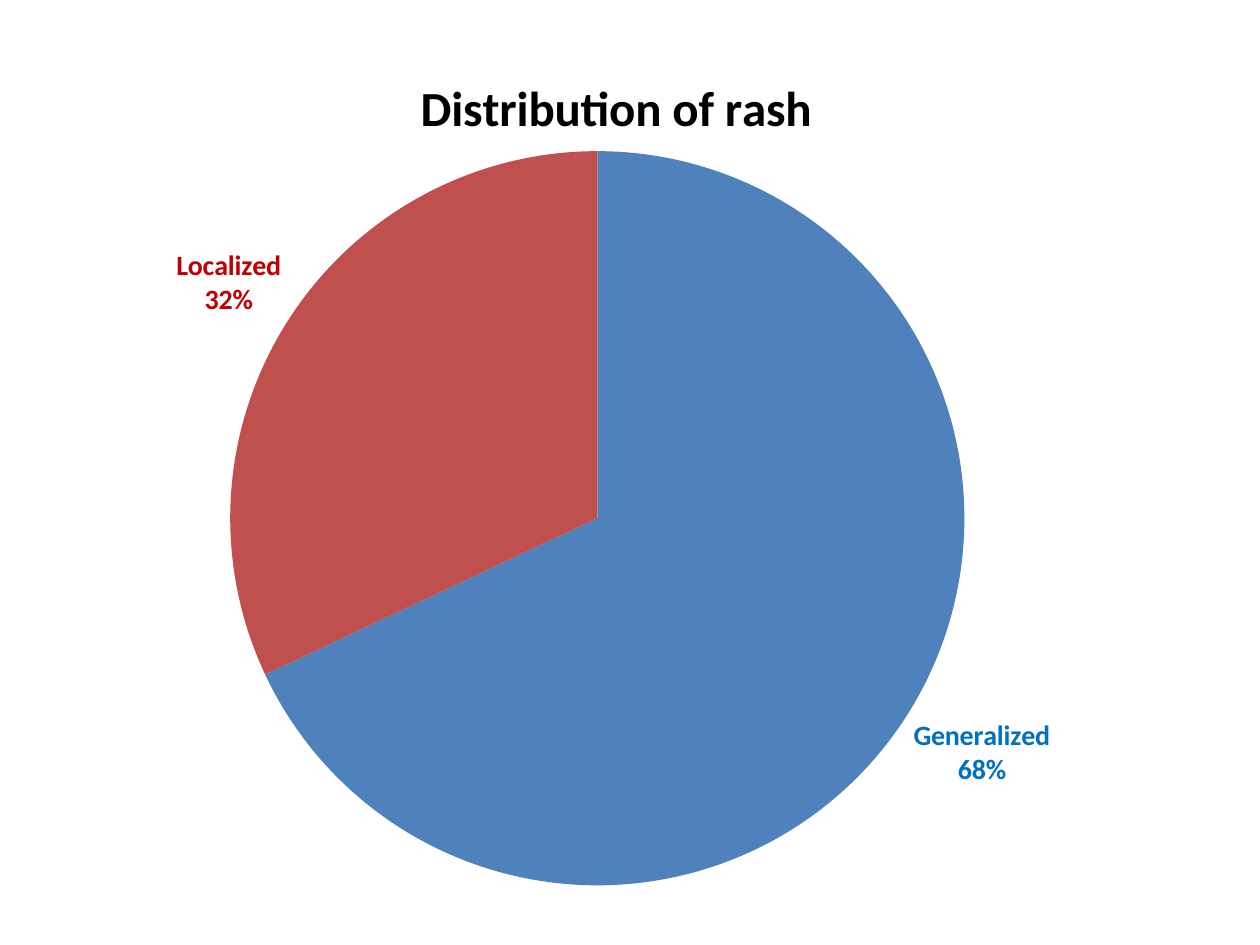
"""Build a slide with a pie chart of rash distribution."""
from dataclasses import dataclass

from lxml.etree import SubElement
from pptx import Presentation
from pptx.chart.data import CategoryChartData
from pptx.dml.color import RGBColor
from pptx.enum.chart import XL_CHART_TYPE, XL_LABEL_POSITION
from pptx.oxml import parse_xml
from pptx.oxml.ns import nsdecls, qn
from pptx.util import Cm, Pt


@dataclass(frozen=True)
class Theme:
    font: str = "Calibri"
    text: str = "000000"
    slices: tuple = ("4F81BD", "C0504D")
    labels: tuple = ("0070C0", "C00000")
    base_size: int = 10
    label_size: int = 16
    title_size: int = 28


class SlideBuilder:
    def __init__(self, page, theme):
        self.page = page
        self.theme = theme

    def style(self, font, size, color, bold=False):
        font.name = self.theme.font
        font.size = Pt(size)
        font.bold = bold
        font.color.rgb = RGBColor.from_string(color)

    def layout(self, **fractions):
        target = '<c:layoutTarget val="inner"/>' if "w" in fractions else ""
        modes = "".join(f'<c:{axis}Mode val="edge"/>' for axis in "xy")
        values = "".join(f'<c:{key} val="{value}"/>' for key, value in fractions.items())
        return parse_xml(
            f'<c:layout {nsdecls("c")}><c:manualLayout>{target}{modes}{values}'
            "</c:manualLayout></c:layout>"
        )

    def title(self, chart, text):
        chart.has_title = True
        frame = chart.chart_title.text_frame
        frame.text = text
        self.style(frame.paragraphs[0].font, self.theme.title_size, self.theme.text, True)
        chart.chart_title.include_in_layout = False
        element = chart.element.find(".//" + qn("c:title"))
        for old in element.findall(qn("c:layout")):
            element.remove(old)
        element.find(qn("c:tx")).addnext(self.layout(x=0.32, y=0.05))

    def labels(self, chart):
        plot = chart.plots[0]
        plot.has_data_labels = False
        series = plot.series[0]
        labels = series.data_labels
        labels.number_format = "0%"
        labels.number_format_is_linked = False
        labels.position = XL_LABEL_POSITION.OUTSIDE_END
        labels.show_category_name = True
        labels.show_percentage = True
        labels.show_value = False
        self.style(labels.font, self.theme.label_size, self.theme.labels[1], True)
        for index, color in enumerate(self.theme.labels):
            label = series.points[index].data_label
            self.style(label.font, self.theme.label_size, color, True)
            label.position = XL_LABEL_POSITION.OUTSIDE_END
        for element in chart.element.xpath(".//c:dLbl"):
            for name, value in (("showVal", "0"), ("showCatName", "1"), ("showPercent", "1")):
                element.find(qn("c:" + name)).set("val", value)
            SubElement(element, qn("c:separator")).text = "\n"
        group = chart.element.find(".//" + qn("c:dLbls"))
        separator = parse_xml(f'<c:separator {nsdecls("c")}>\n</c:separator>')
        flags = [child for child in group if child.tag in (qn("c:showPercent"), qn("c:showBubbleSize"))]
        flags[-1].addnext(separator)

    def pie(self, title, categories, values, left, top, width, height):
        data = CategoryChartData()
        data.categories = categories
        data.add_series("Series 1", values)
        chart = self.page.shapes.add_chart(
            XL_CHART_TYPE.PIE, Cm(left), Cm(top), Cm(width), Cm(height), data
        ).chart
        self.style(chart.font, self.theme.base_size, self.theme.text)
        chart.has_legend = False
        self.title(chart, title)
        chart.plots[0].vary_by_categories = True
        for index, color in enumerate(self.theme.slices):
            fill = chart.plots[0].series[0].points[index].format.fill
            fill.solid()
            fill.fore_color.rgb = RGBColor.from_string(color)
        self.labels(chart)
        plot_area = chart.element.find(".//" + qn("c:plotArea"))
        for old in plot_area.findall(qn("c:layout")):
            plot_area.remove(old)
        plot_area.insert(0, self.layout(x=0.158, y=0.147, w=0.655, h=0.833))


def main():
    deck = Presentation()
    deck.slide_width, deck.slide_height = Cm(25.4), Cm(19.05)
    page = deck.slides.add_slide(deck.slide_layouts[6])
    builder = SlideBuilder(page, Theme())
    builder.pie(
        "Distribution of rash", ("Generalized", "Localized"), (68, 32),
        left=1.07, top=0.43, width=22.6, height=17.78,
    )
    deck.save("out.pptx")


if __name__ == "__main__":
    main()
